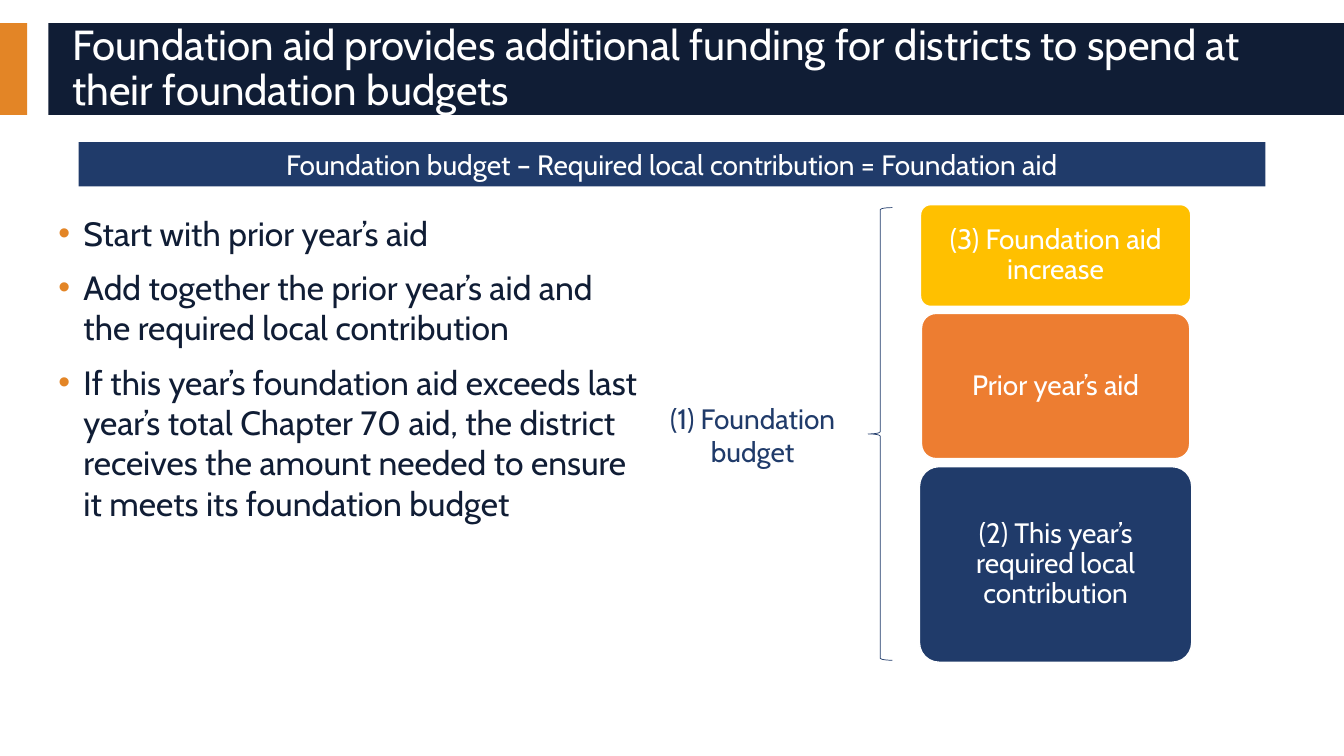
from lxml.etree import SubElement
from pptx import Presentation
from pptx.dml.color import RGBColor
from pptx.enum.shapes import MSO_SHAPE
from pptx.enum.text import MSO_ANCHOR, PP_ALIGN
from pptx.oxml.ns import qn
from pptx.util import Inches, Pt

ORANGE = RGBColor(0xE3, 0x85, 0x26)
NAVY = RGBColor(0x10, 0x1D, 0x35)
BLUE = RGBColor(0x20, 0x3B, 0x6A)
CORAL = RGBColor(0xED, 0x7D, 0x31)
GOLD = RGBColor(0xFF, 0xC0, 0x00)
WHITE = RGBColor(0xFF, 0xFF, 0xFF)


class SlideBuilder:
    font = "Cabin"

    def __init__(self, page):
        self.page = page

    def shape(self, kind, area, fill=None, line=None, width=1):
        shape = self.page.shapes.add_shape(kind, *map(Inches, area))
        shape.shadow.inherit = False
        if fill is None:
            shape.fill.background()
        else:
            shape.fill.solid()
            shape.fill.fore_color.rgb = fill
        if line is None:
            shape.line.fill.background()
        else:
            shape.line.color.rgb = line
            shape.line.width = Pt(width)
        return shape

    def fill_text(self, box, paragraphs, size, color, align=PP_ALIGN.CENTER,
                  anchor=MSO_ANCHOR.MIDDLE, spacing=1.0):
        frame = box.text_frame
        frame.word_wrap = True
        frame.vertical_anchor = anchor
        for index, text in enumerate(paragraphs):
            para = frame.add_paragraph() if index else frame.paragraphs[0]
            para.alignment = align
            para.line_spacing = spacing
            span = para.add_run()
            span.text = text
            span.font.name = self.font
            span.font.size = Pt(size)
            span.font.color.rgb = color
        return frame

    def text(self, area, paragraphs, size, color, **layout):
        box = self.page.shapes.add_textbox(*map(Inches, area))
        return self.fill_text(box, paragraphs, size, color, **layout)

    def bullets(self, area, items, size, color, bullet_color):
        frame = self.text(area, items, size, color, align=PP_ALIGN.LEFT,
                          anchor=MSO_ANCHOR.TOP)
        for para in frame.paragraphs:
            para.space_before = Pt(10)
            properties = para._p.get_or_add_pPr()
            properties.set("marL", str(Inches(0.25)))
            properties.set("indent", str(Inches(-0.25)))
            tint = SubElement(properties, qn("a:buClr"))
            SubElement(tint, qn("a:srgbClr"), val=str(bullet_color))
            SubElement(properties, qn("a:buFont"), typeface="Arial")
            SubElement(properties, qn("a:buChar"), char="•")

    def block(self, area, text, fill):
        """Add a rounded block of the budget stack."""
        block = self.shape(MSO_SHAPE.ROUNDED_RECTANGLE, area, fill, WHITE)
        block.adjustments[0] = 0.1
        frame = self.fill_text(block, [text], 20, WHITE, spacing=0.9)
        frame.margin_left = frame.margin_right = Inches(0.08)
        frame.margin_top = frame.margin_bottom = Inches(0.08)


def main():
    deck = Presentation()
    deck.slide_width, deck.slide_height = Inches(13.33), Inches(7.5)
    builder = SlideBuilder(deck.slides.add_slide(deck.slide_layouts[6]))

    builder.shape(MSO_SHAPE.RECTANGLE, (0, 0.23, 0.27, 0.91), ORANGE)
    builder.shape(MSO_SHAPE.RECTANGLE, (0.48, 0.23, 12.85, 0.91), NAVY)
    builder.text((0.62, 0.32, 12.5, 0.74), [
        "Foundation aid provides additional funding for districts to spend at "
        "their foundation budgets",
    ], 30, WHITE, align=PP_ALIGN.LEFT, spacing=0.9)

    formula = builder.shape(MSO_SHAPE.RECTANGLE, (0.78, 1.41, 11.77, 0.44), BLUE)
    builder.fill_text(formula, [
        "Foundation budget – Required local contribution = Foundation aid",
    ], 20, WHITE)

    builder.bullets((0.48, 2.06, 5.96, 4.49), [
        "Start with prior year’s aid",
        "Add together the prior year’s aid and the required local contribution",
        "If this year’s foundation aid exceeds last year’s total Chapter 70 aid, "
        "the district receives the amount needed to ensure it meets its "
        "foundation budget",
    ], 24, NAVY, ORANGE)

    builder.text((6.45, 3.93, 2.03, 0.77), ["(1) Foundation budget"], 20, BLUE,
                 anchor=MSO_ANCHOR.TOP)
    builder.shape(MSO_SHAPE.LEFT_BRACE, (8.61, 2.06, 0.24, 4.49), line=BLUE,
                  width=0.5)

    stack = [
        ((9.13, 2.03, 2.68, 1.01), "(3) Foundation aid increase", GOLD),
        ((9.14, 3.11, 2.66, 1.44), "Prior year’s aid", CORAL),
        ((9.12, 4.63, 2.7, 1.94), "(2) This year’s required local contribution", BLUE),
    ]
    for area, text, fill in stack:
        builder.block(area, text, fill)

    deck.save("out.pptx")


if __name__ == "__main__":
    main()
